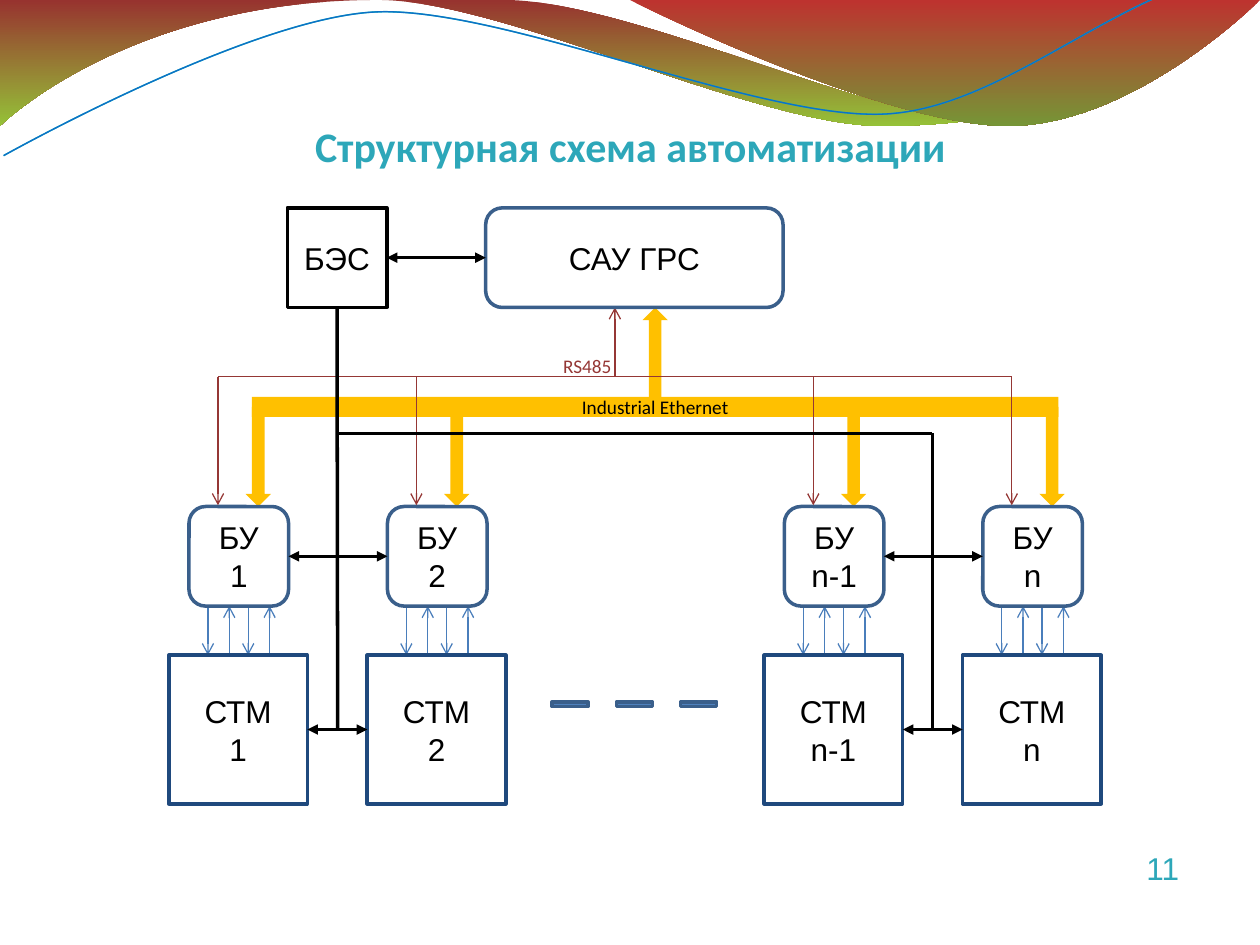
from lxml import etree
from pptx import Presentation
from pptx.dml.color import RGBColor
from pptx.enum.shapes import MSO_CONNECTOR, MSO_SHAPE as Preset
from pptx.enum.text import MSO_ANCHOR as Anchor, MSO_AUTO_SIZE, PP_ALIGN as Align
from pptx.oxml.ns import qn
from pptx.util import Inches, Pt

COLORS = {
    "accent": "2DA7B9", "black": "000000", "white": "FFFFFF",
    "ethernet": "FFC000", "serial": "953735", "signal": "4A7EBB",
    "dash": "4F81BD", "control": "3A5F8B", "machine": "1F497D",
    "teal": "09B7BF", "blue": "0F6FC6",
    "wide_top": "97332F", "wide_bottom": "95C138",
    "right_top": "BD332F", "right_bottom": "769536",
}
UNIT = 0.79
PITCH = 1.575
COLUMNS = {"1": 0, "2": 1, "n-1": 3, "n": 4}

# Each curve is a start point followed by triples of Bezier points.
WIDE_WAVE = [(4.4, -0.01), (4.76, 0.17), (6.63, 0.63), (7.58, 0.63),
             (8.53, 0.63), (9.58, 0.26), (10, 0.09)]
WIDE_WAVE_BACK = [(10.01, 0.36), (9.83, 0.44), (8.7, 0.76), (7.46, 0.75),
                  (6.22, 0.75), (3.82, 0.28), (2.57, 0.34),
                  (1.29, 0.35), (0.46, 0.83), (-0.01, 1.13)]
RIGHT_WAVE = [(4.79, -0.01), (5.09, 0.11), (6.82, 0.62), (7.69, 0.65),
              (8.55, 0.69), (9.61, 0.32), (10, 0.21)]
TEAL_WAVE = [(-0.02, 0.87), (0.47, 0.72), (1.58, 0.41), (2.78, 0.42),
             (3.96, 0.41), (5.91, 0.92), (7.12, 0.9),
             (8.32, 0.87), (9.4, 0.36), (10, 0.22)]
BLUE_WAVE = [(-0.02, 0.8), (0.46, 0.75), (1.64, 0.45), (2.83, 0.46),
             (4.03, 0.46), (5.96, 0.88), (7.16, 0.85),
             (8.35, 0.83), (9.42, 0.41), (10.02, 0.3)]


def rgb(name):
    return RGBColor.from_string(COLORS[name])


def write(frame, text, size=18, font="Arial", color="black", bold=False,
          align=Align.CENTER, anchor=Anchor.MIDDLE, wrap=True):
    frame.word_wrap = wrap
    frame.auto_size = MSO_AUTO_SIZE.NONE
    frame.vertical_anchor = anchor
    frame.text = text
    for paragraph in frame.paragraphs:
        paragraph.alignment = align
        for run in paragraph.runs:
            run.font.size, run.font.name, run.font.bold = Pt(size), font, bold
            run.font.color.rgb = rgb(color)


def paint(shape, fill=None, line=None, width=2):
    shape.shadow.inherit = False
    if fill:
        shape.fill.solid()
        shape.fill.fore_color.rgb = rgb(fill)
    else:
        shape.fill.background()
    if line:
        shape.line.color.rgb = rgb(line)
        shape.line.width = Pt(width)
    else:
        shape.line.fill.background()


def block(slide, preset, left, top, width, height, text="", size=18,
          font="Arial", **colors):
    shape = slide.shapes.add_shape(
        preset, *map(Inches, (left, top, width, height)))
    paint(shape, **colors)
    if text:
        write(shape.text_frame, text, size=size, font=font)
    return shape


def label(slide, left, top, width, height, text, **fmt):
    box = slide.shapes.add_textbox(*map(Inches, (left, top, width, height)))
    write(box.text_frame, text, align=Align.LEFT, anchor=Anchor.TOP, **fmt)


def link(slide, start, end, color="black", width=2, head=None, tail=None):
    line = slide.shapes.add_connector(
        MSO_CONNECTOR.STRAIGHT, *map(Inches, (*start, *end)))
    line.line.color.rgb = rgb(color)
    line.line.width = Pt(width)
    outline = line.line._get_or_add_ln()
    for tag, kind in (("a:headEnd", head), ("a:tailEnd", tail)):
        if kind:
            etree.SubElement(outline, qn(tag), type=kind)
    etree.SubElement(line._element.spPr, qn("a:effectLst"))
    return line


def join(slide, left_block, right_block):
    """Double-headed arrow between the facing sides of two blocks."""
    line = link(slide, (0, 0), (1, 0), head="triangle", tail="triangle")
    line.begin_connect(left_block, 3)
    line.end_connect(right_block, 1)


def curve(slide, pieces, close=False, rotation=0):
    """Draw Bezier pieces joined by straight lines."""
    points = [point for piece in pieces for point in piece]
    builder = slide.shapes.build_freeform(*points[0], scale=Inches(1))
    builder.add_line_segments(points[1:], close=close)
    shape = builder.convert_to_shape()
    segments = iter(list(shape._element.iter(qn("a:lnTo"))))
    for number, piece in enumerate(pieces):
        if number:
            next(segments)
        for _ in range(len(piece) // 3):
            triple = [next(segments) for _ in range(3)]
            bezier = etree.Element(qn("a:cubicBezTo"))
            triple[0].addprevious(bezier)
            for segment in triple:
                bezier.append(segment[0])
                segment.getparent().remove(segment)
    shape.rotation = rotation
    return shape


def draw_header(slide):
    for pieces, shade in (([[(0, 0)], WIDE_WAVE, WIDE_WAVE_BACK], "wide"),
                          ([RIGHT_WAVE, [(10, 0)]], "right")):
        wave = curve(slide, pieces, close=True)
        paint(wave)
        wave.fill.gradient()
        wave.fill.gradient_angle = 270
        for stop, end in zip(wave.fill.gradient_stops, ("top", "bottom")):
            stop.color.rgb = rgb(f"{shade}_{end}")
    for points, color, width in ((TEAL_WAVE, "teal", 0.85),
                                 (BLUE_WAVE, "blue", 0.75)):
        paint(curve(slide, [points], rotation=-2.7), line=color, width=width)


def draw_title(slide, left, top, width, height):
    title = slide.shapes.title
    title.left, title.top, title.width, title.height = map(
        Inches, (left, top, width, height))
    write(title.text_frame, "Структурная схема автоматизации", size=24,
          font="Calibri", color="accent", bold=True, align=Align.LEFT,
          anchor=Anchor.TOP, wrap=False)


def draw_ethernet(slide, left, top, width, height):
    arrow_top = top + height / 2
    for step in COLUMNS.values():
        block(slide, Preset.DOWN_ARROW, left - 0.05 + step * PITCH, arrow_top,
              0.2, UNIT, fill="ethernet")
    block(slide, Preset.UP_ARROW, left + width / 2 - 0.1, arrow_top - UNIT,
          0.2, UNIT, fill="ethernet")
    block(slide, Preset.RECTANGLE, left, top, width, height,
          "Industrial Ethernet", size=11, font="Calibri", fill="ethernet")


def draw_column(slide, left, top, number):
    """Control unit above its machine; returns both blocks."""
    bottom, machine_top = top + UNIT, top + 1.18
    for index, offset in enumerate((0.15, 0.32, 0.47, 0.64)):
        ends = [(left + offset, bottom), (left + offset, machine_top)]
        if index % 2:
            ends.reverse()
        link(slide, *ends, color="signal", width=0.75, tail="arrow")
    machine = block(slide, Preset.RECTANGLE, left - 0.16, machine_top, 1.1,
                    1.18, f"СТМ\n{number}", line="machine")
    control = block(slide, Preset.ROUNDED_RECTANGLE, left, top, UNIT, UNIT,
                    f"БУ\n{number}", line="control")
    return control, machine


def draw_ellipsis(slide, left, top):
    for step in range(3):
        dash = block(slide, Preset.MATH_MINUS, left + step * 0.51, top,
                     0.39, 0.16, fill="dash", line="control")
        dash.adjustments[0] = 0.235


def draw_serial_bus(slide, left, top, width):
    style = {"color": "serial", "width": 0.75}
    for step in COLUMNS.values():
        x = left + step * PITCH
        link(slide, (x, top), (x, top + 1.02), tail="arrow", **style)
    link(slide, (left, top), (left + width, top), **style)
    middle = left + width / 2
    link(slide, (middle, top - 0.55), (middle, top), head="arrow", **style)
    label(slide, middle - 0.51, top - 0.23, 0.59, 0.28, "RS485", size=11,
          font="Calibri", color="serial", wrap=False)


def draw_power(slide, left, top, columns):
    """Power unit, main controller and the black lines to all columns."""
    power = block(slide, Preset.RECTANGLE, left, top, UNIT, UNIT, "БЭС",
                  fill="white", line="black")
    main_control = block(slide, Preset.ROUNDED_RECTANGLE, left + PITCH, top,
                         2.36, UNIT, "САУ ГРС", line="control")
    trunk, branch = left + 0.4, left + 5.12
    turn, bottom = top + 1.79, top + 4.14
    link(slide, (trunk, top + UNIT), (trunk, bottom)).begin_connect(power, 2)
    link(slide, (branch, turn), (trunk, turn))
    link(slide, (branch, turn), (branch, bottom))
    join(slide, power, main_control)
    for first, second in (columns[:2], columns[2:]):
        for left_block, right_block in zip(first, second):
            join(slide, left_block, right_block)


def main():
    deck = Presentation()
    deck.slide_width, deck.slide_height = Inches(10), Inches(7.5)
    slide = deck.slides.add_slide(deck.slide_layouts[5])
    draw_header(slide)
    draw_title(slide, 2.4, 0.91, 5.21, 0.43)
    draw_ethernet(slide, 2, 3.15, 6.4, 0.16)
    columns = [draw_column(slide, 1.5 + step * PITCH, 4.02, number)
               for number, step in COLUMNS.items()]
    draw_ellipsis(slide, 4.33, 5.51)
    draw_serial_bus(slide, 1.73, 2.99, 4 * PITCH)
    draw_power(slide, 2.28, 1.65, columns)
    label(slide, 9, 6.69, 0.46, 0.47, "11", color="accent")
    deck.save("out.pptx")


if __name__ == "__main__":
    main()
